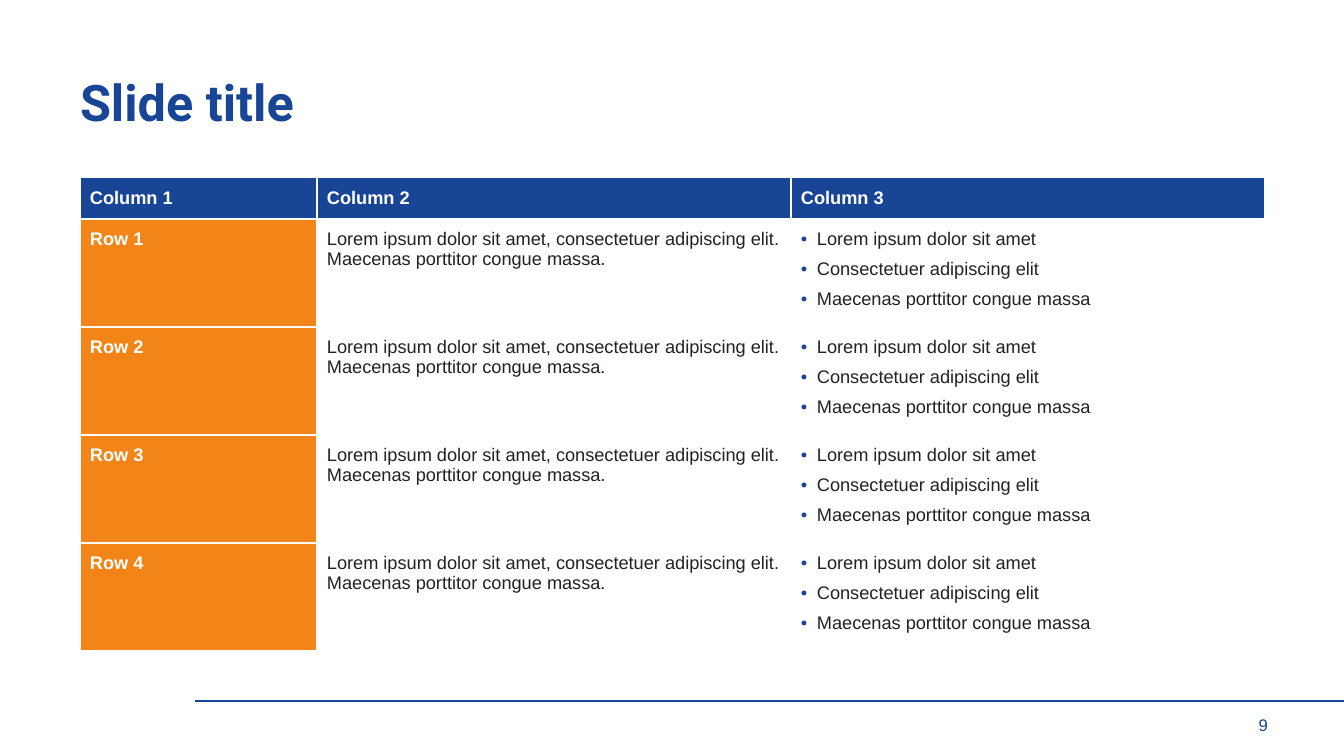
from lxml import etree
from pptx import Presentation
from pptx import util as u
from pptx.dml.color import RGBColor
from pptx.enum import shapes, text
from pptx.oxml.ns import qn

TITLE = "Slide title"
PAGE_NUMBER = "9"
HEADINGS = ["Column 1", "Column 2", "Column 3"]
ROW_LABELS = ["Row 1", "Row 2", "Row 3", "Row 4"]
SUMMARY = "Lorem ipsum dolor sit amet, consectetuer adipiscing elit. Maecenas porttitor congue massa."
POINTS = ["Lorem ipsum dolor sit amet", "Consectetuer adipiscing elit", "Maecenas porttitor congue massa"]

BLUE, ORANGE, INK, WHITE = "184596", "F38417", "262023", "FFFFFF"
LEFT, TABLE_TOP = 80, 177
COLUMN_WIDTHS = [237, 474, 474]
HEADER_HEIGHT, ROW_HEIGHT = 42, 108
CELL_INSET, BULLET_INDENT = 10, 16


def px(length):
    """Convert pixels at 100.8 per inch to EMU."""
    return u.Emu(round(length * 914400 / 100.8))


def color(value):
    """Turn a hex string into a colour."""
    return RGBColor.from_string(value)


def style(paragraph, size, hex_color, bold=False, font="Arial"):
    """Format all runs of a paragraph."""
    for run in paragraph.runs:
        run.font.name, run.font.size, run.font.bold = font, u.Pt(size), bold
        run.font.color.rgb = color(hex_color)


def set_frame(frame, anchor):
    """Remove the insets of a text frame and set its wrapping and anchor."""
    frame.margin_left = frame.margin_right = frame.margin_top = frame.margin_bottom = 0
    frame.word_wrap, frame.auto_size = True, text.MSO_AUTO_SIZE.NONE
    frame.vertical_anchor = anchor


def add_bullet(paragraph):
    """Give a paragraph a blue bullet with a hanging indent."""
    properties = paragraph._p.get_or_add_pPr()
    properties.set("marL", str(px(BULLET_INDENT)))
    properties.set("indent", str(-px(BULLET_INDENT)))
    bullet_color = etree.SubElement(properties, qn("a:buClr"))
    etree.SubElement(bullet_color, qn("a:srgbClr"), val=BLUE)
    etree.SubElement(properties, qn("a:buFont"), typeface="Arial")
    etree.SubElement(properties, qn("a:buChar"), char="•")


def add_borders(cell):
    """Draw thin white lines around a cell."""
    properties = cell._tc.get_or_add_tcPr()
    for index, side in enumerate(("lnL", "lnR", "lnT", "lnB")):
        line = etree.Element(qn("a:" + side), w=str(u.Pt(1)))
        fill = etree.SubElement(line, qn("a:solidFill"))
        etree.SubElement(fill, qn("a:srgbClr"), val=WHITE)
        properties.insert(index, line)


def fill_cell(cell, lines, fill, ink, bold=False, bulleted=False, anchor=text.MSO_ANCHOR.TOP):
    """Write and format the content of one table cell."""
    cell.margin_left = cell.margin_right = cell.margin_top = cell.margin_bottom = px(CELL_INSET)
    cell.vertical_anchor = anchor
    cell.fill.solid()
    cell.fill.fore_color.rgb = color(fill)
    add_borders(cell)
    cell.text_frame.text = "\n".join(lines)
    for index, paragraph in enumerate(cell.text_frame.paragraphs):
        if bulleted:
            add_bullet(paragraph)
        if index:
            paragraph.space_before = u.Pt(7)
        style(paragraph, 13, ink, bold)


def add_table(slide):
    """Build the table with a header row and a label column."""
    height = HEADER_HEIGHT + ROW_HEIGHT * len(ROW_LABELS)
    table = slide.shapes.add_table(
        len(ROW_LABELS) + 1, len(HEADINGS), px(LEFT), px(TABLE_TOP), px(sum(COLUMN_WIDTHS)), px(height)
    ).table
    table.horz_banding = False
    table.first_col = True
    for column, width in zip(table.columns, COLUMN_WIDTHS):
        column.width = px(width)
    for index, row in enumerate(table.rows):
        row.height = px(ROW_HEIGHT if index else HEADER_HEIGHT)
    for index, heading in enumerate(HEADINGS):
        fill_cell(table.cell(0, index), [heading], BLUE, WHITE, bold=True, anchor=text.MSO_ANCHOR.MIDDLE)
    for index, label in enumerate(ROW_LABELS, 1):
        fill_cell(table.cell(index, 0), [label], ORANGE, WHITE, bold=True)
        fill_cell(table.cell(index, 1), [SUMMARY], WHITE, INK)
        fill_cell(table.cell(index, 2), POINTS, WHITE, INK, bulleted=True)


def add_footer(slide):
    """Add the footer line and the page number."""
    line = slide.shapes.add_connector(shapes.MSO_CONNECTOR.STRAIGHT, px(195), px(701), px(1344), px(701))
    line.line.color.rgb = color(BLUE)
    line.line.width = u.Pt(0.75)
    etree.SubElement(line._element.spPr, qn("a:effectLst"))
    number = slide.shapes.add_textbox(px(1240), px(716), px(28), px(21))
    set_frame(number.text_frame, text.MSO_ANCHOR.MIDDLE)
    number.text_frame.text = PAGE_NUMBER
    paragraph = number.text_frame.paragraphs[0]
    paragraph.alignment, paragraph.line_spacing = text.PP_ALIGN.RIGHT, 0.9
    style(paragraph, 12, BLUE)


def add_title(slide):
    """Place and format the slide title."""
    title = slide.shapes.title
    title.left, title.top, title.width, title.height = px(LEFT), px(80), px(sum(COLUMN_WIDTHS)), px(63)
    set_frame(title.text_frame, text.MSO_ANCHOR.TOP)
    title.text_frame.text = TITLE
    paragraph = title.text_frame.paragraphs[0]
    paragraph.alignment, paragraph.line_spacing = text.PP_ALIGN.LEFT, 0.85
    style(paragraph, 36, BLUE, bold=True, font="Roboto")


def main():
    """Build and save the presentation."""
    presentation = Presentation()
    presentation.slide_width, presentation.slide_height = px(1344), px(756)
    slide = presentation.slides.add_slide(presentation.slide_layouts[5])
    add_title(slide)
    add_table(slide)
    add_footer(slide)
    presentation.save("out.pptx")


if __name__ == "__main__":
    main()
